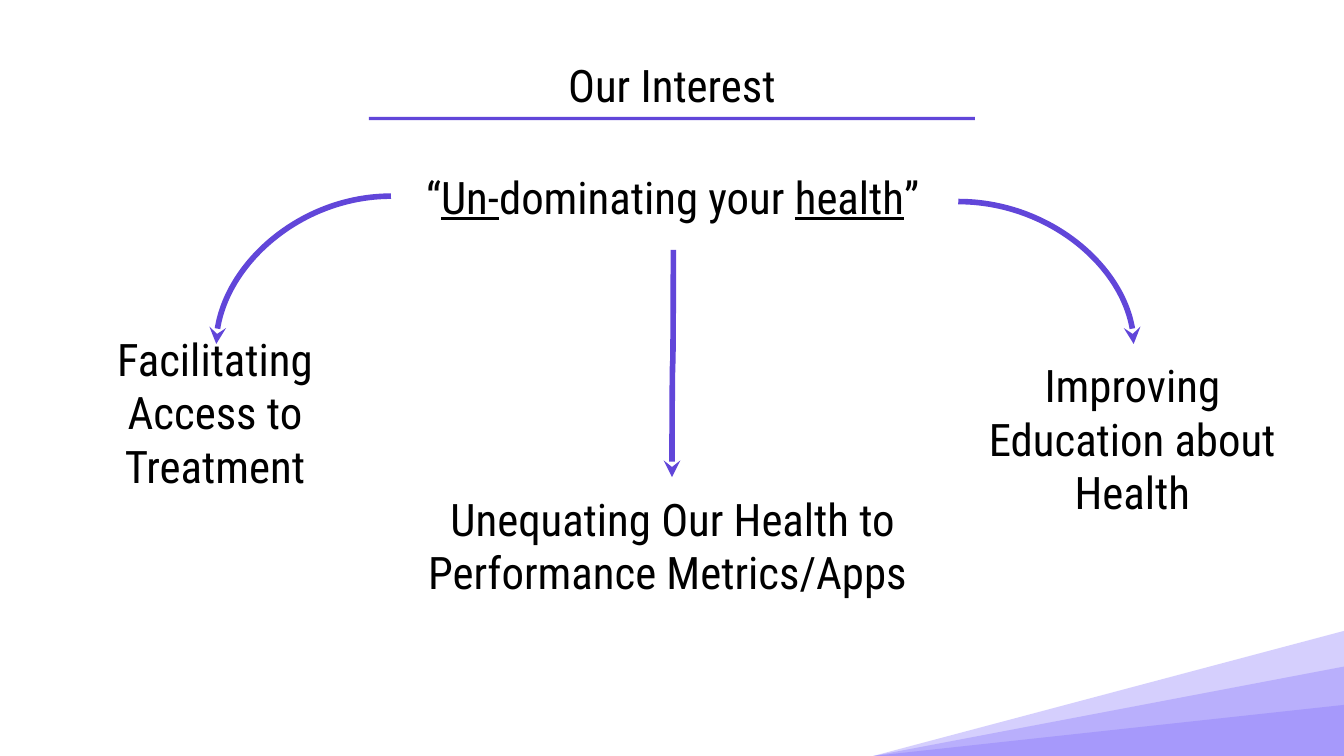
import pptx
import pptx.util
import pptx.dml.color
import pptx.enum.shapes
import pptx.enum.text
import pptx.oxml.ns
from dataclasses import dataclass
from lxml import etree

PX = 4572  # 200 px to the inch
SLIDE_WIDTH, SLIDE_HEIGHT = 2000, 1125


@dataclass(frozen=True)
class Theme:
    text: str = "000000"
    accent: str = "6146D9"
    ray: str = "7E6CFB"
    ray_alpha: int = 32
    font: str = "Roboto Condensed"
    size: int = 24
    arrow_weight: int = 3


theme = Theme()
rgb = pptx.dml.color.RGBColor.from_string
qn = pptx.oxml.ns.qn
shape_kinds = pptx.enum.shapes.MSO_SHAPE
anchors = pptx.enum.text.MSO_ANCHOR


def fill_plain(shape, color):
    shape.shadow.inherit = False
    shape.fill.solid()
    shape.fill.fore_color.rgb = rgb(color)
    shape.line.fill.background()


def write_centred(box, bounds, parts, anchor=anchors.MIDDLE):
    """Place a text box and fill it with (text, underlined) parts."""
    box.left, box.top, box.width, box.height = [n * PX for n in bounds]
    frame = box.text_frame
    frame.word_wrap = True
    frame.auto_size = pptx.enum.text.MSO_AUTO_SIZE.NONE
    frame.vertical_anchor = anchor
    frame.margin_left = frame.margin_right = 20 * PX
    frame.margin_top = frame.margin_bottom = 20 * PX
    paragraph = frame.paragraphs[0]
    paragraph.alignment = pptx.enum.text.PP_ALIGN.CENTER
    for text, underlined in parts:
        run = paragraph.add_run()
        run.text = text
        run.font.name = theme.font
        run.font.size = pptx.util.Pt(theme.size)
        run.font.color.rgb = rgb(theme.text)
        if underlined:
            run.font.underline = True


deck = pptx.Presentation()
deck.slide_width = SLIDE_WIDTH * PX
deck.slide_height = SLIDE_HEIGHT * PX
slide = deck.slides.add_slide(deck.slide_layouts[5])
shapes = slide.shapes

# Translucent rays in the bottom right corner
ray_width = 700
for ray_height in (186, 133, 76):
    ray = shapes.add_shape(
        shape_kinds.RIGHT_TRIANGLE,
        (SLIDE_WIDTH - ray_width) * PX, (SLIDE_HEIGHT - ray_height) * PX,
        ray_width * PX, ray_height * PX)
    fill_plain(ray, theme.ray)
    ray._element.spPr.find(qn("a:xfrm")).set("flipH", "1")
    ray_color = ray._element.spPr.find(qn("a:solidFill")).find(qn("a:srgbClr"))
    etree.SubElement(ray_color, qn("a:alpha")).set("val", str(theme.ray_alpha * 1000))

# Title and its rule
write_centred(shapes.title, (100, 90, 1800, 72), [("Our Interest", False)])
title_rule = shapes.add_shape(
    shape_kinds.RECTANGLE, 549 * PX, 174 * PX, 902 * PX, 5 * PX)
fill_plain(title_rule, theme.accent)

# Central idea and the three interests that follow from it
statements = [
    ((582, 256, 838, 72), anchors.MIDDLE,
     [("“", False), ("Un-", True), ("dominating your ", False),
      ("health", True), ("”", False)]),
    ((60, 512, 520, 202), anchors.MIDDLE,
     [("Facilitating Access to Treatment", False)]),
    ((1406, 512, 558, 202), anchors.TOP,
     [("Improving Education about Health", False)]),
    ((582, 710, 838, 202), anchors.MIDDLE,
     [("Unequating Our Health to Performance Metrics/Apps ", False)]),
]
for bounds, anchor, parts in statements:
    write_centred(shapes.add_textbox(0, 0, 0, 0), bounds, parts, anchor)

# Arrows: start, end, curve preset, quarter turns
arrows = [
    ((582, 292), (322, 512), "curvedConnector2", 0),
    ((832, 540), (1170, 542), "curvedConnector3", 1),
    ((1426, 300), (1687, 512), "curvedConnector2", 0),
]
for (x1, y1), (x2, y2), curve, quarter_turns in arrows:
    arrow = shapes.add_connector(
        pptx.enum.shapes.MSO_CONNECTOR.CURVE, x1 * PX, y1 * PX, x2 * PX, y2 * PX)
    arrow.line.color.rgb = rgb(theme.accent)
    arrow.line.width = pptx.util.Pt(theme.arrow_weight)
    properties = arrow._element.spPr
    properties.find(qn("a:prstGeom")).set("prst", curve)
    if quarter_turns:
        properties.find(qn("a:xfrm")).set("rot", str(quarter_turns * 5400000))
    etree.SubElement(properties.find(qn("a:ln")), qn("a:tailEnd")).set("type", "stealth")
    etree.SubElement(properties, qn("a:effectLst"))

deck.save("out.pptx")
